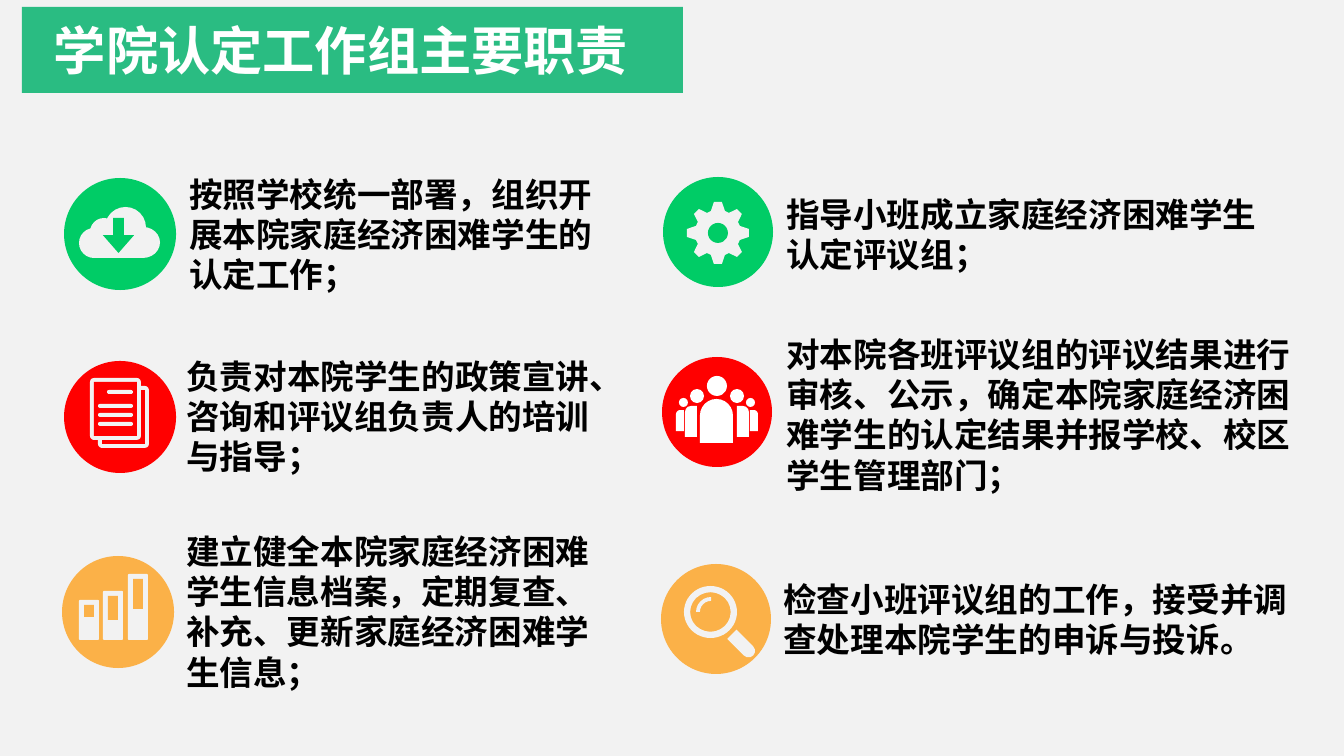
import math

import pptx
import pptx.dml.color
import pptx.enum.shapes
import pptx.enum.text
import pptx.util
from lxml import etree

MSO = pptx.enum.shapes.MSO_SHAPE
PX = 914400 / 134.4
COLORS = {"bg": "F2F2F2", "banner": "20BA7C", "green": "00CC66", "red": "FF0000",
          "orange": "FBB148", "light": "F2F2F2", "white": "FFFFFF", "black": "000000"}
FONT = "Times New Roman"

TITLE = "学院认定工作组主要职责"
BANNER_BOX = (22, 7, 661, 86)
TITLE_BOX = (-87, 11, 856, 76)

# text, text box, icon, disc colour, disc (left, top, diameter)
DUTIES = [
    ("按照学校统一部署，组织开展本院家庭经济困难学生的认定工作；",
     (176, 167, 449, 136), "cloud", "green", (64, 178, 112)),
    ("指导小班成立家庭经济困难学生认定评议组；",
     (773, 187, 512, 95), "gear", "green", (663, 177, 110)),
    ("负责对本院学生的政策宣讲、咨询和评议组负责人的培训与指导；",
     (173, 349, 444, 136), "pages", "red", (64, 361, 112)),
    ("对本院各班评议组的评议结果进行审核、公示，确定本院家庭经济困难学生的认定结果并报学校、校区学生管理部门；",
     (773, 327, 535, 176), "people", "red", (662, 357, 110)),
    ("建立健全本院家庭经济困难学生信息档案，定期复查、补充、更新家庭经济困难学生信息；",
     (173, 524, 456, 176), "bars", "orange", (62, 556, 112)),
    ("检查小班评议组的工作，接受并调查处理本院学生的申诉与投诉。",
     (770, 572, 535, 95), "magnifier", "orange", (661, 564, 110)),
]

# Icon parts: preset, box inside the disc, colour, then optional format values
ICONS = {
    "cloud": [
        (MSO.OVAL, (15, 50, 30, 30), "light"),
        (MSO.OVAL, (26, 40, 28, 28), "light"),
        (MSO.OVAL, (41, 29, 41, 41), "light"),
        (MSO.OVAL, (62, 49, 34, 31), "light"),
        (MSO.RECTANGLE, (30, 54, 49, 26), "light"),
        (MSO.DOWN_ARROW, (39, 40, 31, 35), "green", {"adj": (0.35, 0.57)}),
    ],
    "gear": [(MSO.OVAL, (45, 46, 20, 20), "green")],
    "pages": [
        part for x, y in ((34, 25), (26, 17)) for part in (
            (MSO.ROUNDED_RECTANGLE, (x, y, 51, 62), "light", {"adj": (0.08,)}),
            (MSO.RECTANGLE, (x + 4, y + 4, 43, 54), "red"))
    ] + [
        (MSO.ROUNDED_RECTANGLE, (x, y, 69 - x, 4), "light", {"adj": (0.5,)})
        for x, y in ((43, 29), (34, 43), (34, 52), (34, 61))
    ],
    "people": [
        (MSO.OVAL, (45, 19, 20, 20), "white"),
        (MSO.ROUND_2_SAME_RECTANGLE, (38, 42, 33, 44), "white", {"adj": (0.5, 0)}),
    ] + [
        part for head, body in (((28, 32, 14, 14), (23, 49, 12, 31)),
                                ((17, 41, 9, 9), (14, 53, 8, 21)))
        for flip in (True, False) for part in (
            (MSO.OVAL, head if flip else (110 - head[0] - head[2], *head[1:]), "white"),
            (MSO.ROUND_1_RECTANGLE, body if flip else (110 - body[0] - body[2], *body[1:]),
             "white", {"adj": (0.5,), "flip": flip}))
    ],
    "bars": [
        part for x, top, window in ((17, 44, 12), (41, 35, 24), (66, 18, 30)) for part in (
            (MSO.ROUNDED_RECTANGLE, (x, top, 20, 84 - top), "light", {"adj": (0.06,)}),
            (MSO.RECTANGLE, (x + 5, top + 5, 10, window), "orange"))
    ],
    "magnifier": [
        (MSO.DONUT, (23, 22, 53, 52), "light", {"adj": (0.12,)}),
        # Arc angles are 180 and 270 degrees, in units of 5/3 of a degree
        (MSO.BLOCK_ARC, (35, 33, 30, 30), "light", {"adj": (108, 162, 0.13)}),
        (MSO.ROUND_2_SAME_RECTANGLE, (75, 66, 13, 30), "light",
         {"adj": (0.5, 0), "rotation": 135}),
    ],
}


def emu(box):
    return [pptx.util.Emu(round(v * PX)) for v in box]


def rgb(name):
    return pptx.dml.color.RGBColor.from_string(COLORS[name])


def paint(sp, color):
    sp.shadow.inherit = False
    sp.fill.solid()
    sp.fill.fore_color.rgb = rgb(color)
    sp.line.fill.background()


def add_part(shapes, preset, box, color, extra=None):
    extra = extra or {}
    sp = shapes.add_shape(preset, *emu(box))
    for i, value in enumerate(extra.get("adj", ())):
        sp.adjustments[i] = value
    sp.rotation = extra.get("rotation", 0)
    if extra.get("flip"):
        sp.element.spPr.xfrm.set("flipH", "1")
    paint(sp, color)
    return sp


def add_gear(shapes, cx, cy):
    """Eight teeth, each with two root corners and two tip corners."""
    corners = ((23, -17), (31, -6.5), (31, 6.5), (23, 17))
    points = []
    for tooth in range(8):
        for radius, offset in corners:
            a = math.radians(45 * tooth + offset)
            points.append((cx + radius * math.cos(a), cy + radius * math.sin(a)))
    builder = shapes.build_freeform(*points[0], scale=PX)
    builder.add_line_segments(points[1:], close=True)
    paint(builder.convert_to_shape(), "light")


def add_icon(s, icon, color, disc):
    x, y, size = disc
    shapes = s.shapes.add_group_shape().shapes
    add_part(shapes, MSO.OVAL, (x, y, size, size), color)
    if icon == "gear":
        add_gear(shapes, x + 55, y + 56)
    for preset, (dx, dy, w, h), *style in ICONS[icon]:
        add_part(shapes, preset, (x + dx, y + dy, w, h), *style)


def write(sp, text, size, color, align):
    tf = sp.text_frame
    frame_format = {"word_wrap": True, "auto_size": pptx.enum.text.MSO_AUTO_SIZE.NONE,
                    "vertical_anchor": pptx.enum.text.MSO_ANCHOR.TOP}
    for name, value in frame_format.items():
        setattr(tf, name, value)
    p = tf.paragraphs[0]
    p.alignment = align
    r = p.add_run()
    r.text = text
    for name, value in {"name": FONT, "size": pptx.util.Pt(size), "bold": True}.items():
        setattr(r.font, name, value)
    r.font.color.rgb = rgb(color)


def main():
    prs = pptx.Presentation()
    prs.slide_width, prs.slide_height = emu((1344, 756))
    s = prs.slides.add_slide(prs.slide_layouts[5])
    s.background.fill.solid()
    s.background.fill.fore_color.rgb = rgb("bg")

    banner = add_part(s.shapes, MSO.RECTANGLE, BANNER_BOX, "banner")
    fill = banner.element.spPr.find(".//{*}srgbClr")
    etree.SubElement(fill, fill.tag.replace("srgbClr", "alpha"), val="95000")
    s.shapes.element.insert(2, banner.element)  # behind the title

    title = s.shapes.title
    title.left, title.top, title.width, title.height = emu(TITLE_BOX)
    write(title, TITLE, 28, "white", pptx.enum.text.PP_ALIGN.CENTER)

    for text, box, icon, color, disc in DUTIES:
        write(s.shapes.add_textbox(*emu(box)), text, 18, "black",
              pptx.enum.text.PP_ALIGN.LEFT)
        add_icon(s, icon, color, disc)

    prs.save("out.pptx")


if __name__ == "__main__":
    main()
